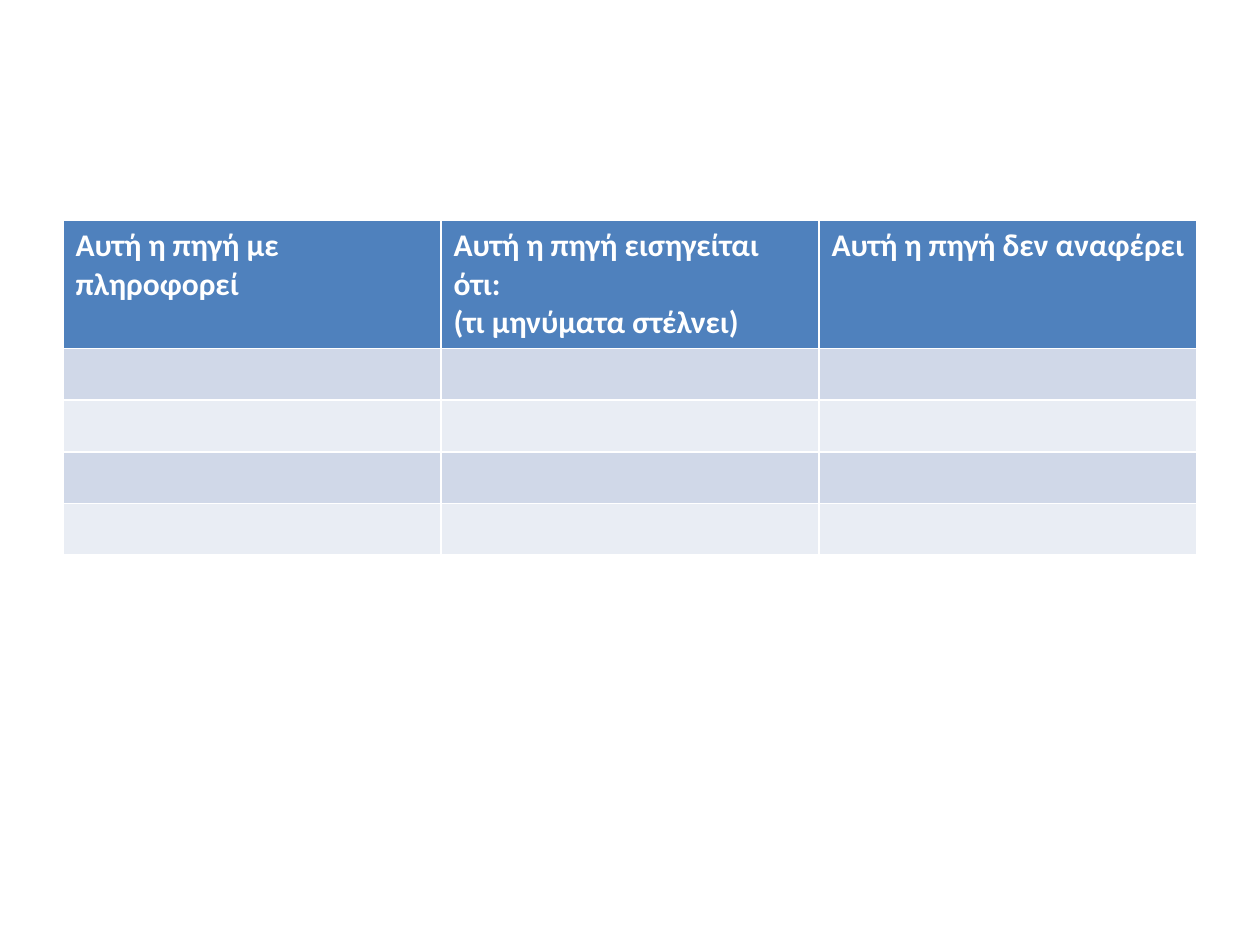
"""Build a slide with an empty three-column table for analysing a source."""
from pptx import Presentation
from pptx.dml.color import RGBColor
from pptx.util import Inches, Pt

HEADINGS = [
    "Αυτή η πηγή με πληροφορεί",
    "Αυτή η πηγή εισηγείται ότι:\n(τι μηνύματα στέλνει)",
    "Αυτή η πηγή δεν αναφέρει",
]
EMPTY_ROWS = 4
LEFT, TOP, WIDTH, ROW_HEIGHT = 0.5, 1.75, 9, 0.41

WHITE = RGBColor(0xFF, 0xFF, 0xFF)
HEADER_BLUE = RGBColor(0x4F, 0x81, 0xBD)
BAND_COLORS = [RGBColor(0xD0, 0xD8, 0xE8), RGBColor(0xE9, 0xED, 0xF4)]


def fill_cell(cell, color):
    cell.fill.solid()
    cell.fill.fore_color.rgb = color


def write_heading(cell, text):
    cell.text_frame.text = text
    for paragraph in cell.text_frame.paragraphs:
        for run in paragraph.runs:
            run.font.name = "Calibri"
            run.font.size = Pt(18)
            run.font.bold = True
            run.font.color.rgb = WHITE


def main():
    presentation = Presentation()
    presentation.slide_width = Inches(10)
    presentation.slide_height = Inches(7.5)
    slide = presentation.slides.add_slide(presentation.slide_layouts[6])

    row_count = EMPTY_ROWS + 1
    table = slide.shapes.add_table(
        row_count, len(HEADINGS), Inches(LEFT), Inches(TOP),
        Inches(WIDTH), Inches(ROW_HEIGHT * row_count),
    ).table

    for row_index, row in enumerate(table.rows):
        row.height = Inches(ROW_HEIGHT)
        color = BAND_COLORS[(row_index - 1) % 2] if row_index else HEADER_BLUE
        for cell in row.cells:
            fill_cell(cell, color)
    for cell, heading in zip(table.rows[0].cells, HEADINGS):
        write_heading(cell, heading)

    presentation.save("out.pptx")


if __name__ == "__main__":
    main()
